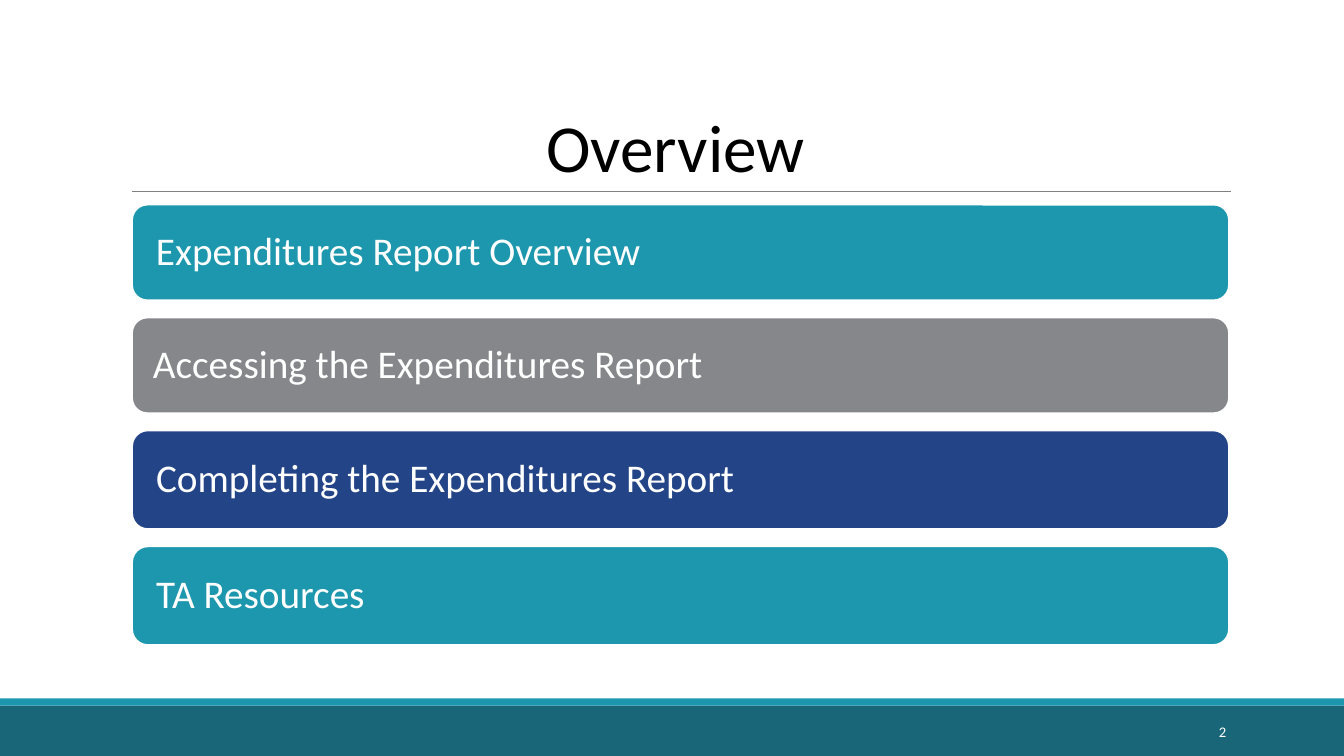
from dataclasses import dataclass

from lxml import etree
from pptx import Presentation
from pptx.dml.color import RGBColor
from pptx.enum.shapes import MSO_CONNECTOR, MSO_SHAPE
from pptx.enum.text import MSO_ANCHOR, PP_ALIGN
from pptx.oxml.ns import qn
from pptx.util import Inches, Pt

RECT, ROUNDED = MSO_SHAPE.RECTANGLE, MSO_SHAPE.ROUNDED_RECTANGLE
STRAIGHT = MSO_CONNECTOR.STRAIGHT
MIDDLE, BOTTOM = MSO_ANCHOR.MIDDLE, MSO_ANCHOR.BOTTOM
LEFT, CENTER, RIGHT = PP_ALIGN.LEFT, PP_ALIGN.CENTER, PP_ALIGN.RIGHT


@dataclass(frozen=True)
class Theme:
    font: str = "Calibri"
    title_size: float = 48
    topic_size: float = 28
    number_size: float = 10.5
    black: str = "000000"
    white: str = "FFFFFF"
    teal: str = "1D97AE"
    deep_teal: str = "196678"
    gray: str = "85878A"
    navy: str = "234587"
    rule: str = "808080"


theme = Theme()
WIDTH, HEIGHT = 13.33, 7.5
MARGIN, CONTENT_WIDTH = 1.3, 10.9
GAP = 0.15


def add_block(kind, left, top, width, height, color):
    block = slide.shapes.add_shape(
        kind, Inches(left), Inches(top), Inches(width), Inches(height))
    block.shadow.inherit = False
    block.fill.solid()
    block.fill.fore_color.rgb = RGBColor.from_string(color)
    block.line.fill.background()
    return block


def write(frame, text, size, color, align, anchor, spacing=1.0):
    frame.word_wrap = True
    frame.vertical_anchor = anchor
    paragraph = frame.paragraphs[0]
    paragraph.alignment = align
    paragraph.line_spacing = spacing
    run = paragraph.add_run()
    run.text = text
    run.font.name = theme.font
    run.font.size = Pt(size)
    run.font.color.rgb = RGBColor.from_string(color)
    return run


deck = Presentation()
deck.slide_width, deck.slide_height = Inches(WIDTH), Inches(HEIGHT)
slide = deck.slides.add_slide(deck.slide_layouts[5])

# Footer bands
add_block(RECT, 0, 7, WIDTH, 0.5, theme.deep_teal)
add_block(RECT, 0, 6.93, WIDTH, 0.07, theme.teal)

# Title with the rule below it
title = slide.shapes.title
title.left, title.top = Inches(1.2), Inches(0.31)
title.width, title.height = Inches(11), Inches(1.59)
write(title.text_frame, "Overview", theme.title_size, theme.black,
      CENTER, BOTTOM, 0.85)

title_rule = slide.shapes.add_connector(
    STRAIGHT, Inches(1.31), Inches(1.9), Inches(12.21), Inches(1.9))
title_rule.line.color.rgb = RGBColor.from_string(theme.rule)
title_rule.line.width = Pt(0.5)
etree.SubElement(title_rule._element.spPr, qn("a:effectLst"))

# Slide number as a live field
number = slide.shapes.add_textbox(
    Inches(10.83), Inches(7.06), Inches(1.43), Inches(0.4))
number_run = write(number.text_frame, "2", theme.number_size, theme.white,
                   RIGHT, MIDDLE)
number_run._r.tag = qn("a:fld")
number_run._r.set("id", "{B6F15528-21DE-4FAA-801E-634DDDAF4B2B}")
number_run._r.set("type", "slidenum")
deck.slides._sldIdLst.getparent().set("firstSlideNum", "2")

# Topic bars, stacked with equal gaps: text, color, height, left inset
topics = [
    ("Expenditures Report Overview", theme.teal, 0.97, 0.2),
    ("Accessing the Expenditures Report", theme.gray, 0.97, 0.17),
    ("Completing the Expenditures Report", theme.navy, 1.0, 0.2),
    ("TA Resources", theme.teal, 1.0, 0.2),
]
topic_top = 2.02
for topic, color, height, inset in topics:
    bar = add_block(ROUNDED, MARGIN, topic_top, CONTENT_WIDTH, height, color)
    bar.line.color.rgb = RGBColor.from_string(theme.white)
    bar.line.width = Pt(2.75)
    bar.text_frame.margin_left = Inches(inset)
    write(bar.text_frame, topic, theme.topic_size, theme.white,
          LEFT, MIDDLE, 0.9)
    topic_top += height + GAP

deck.save("out.pptx")
